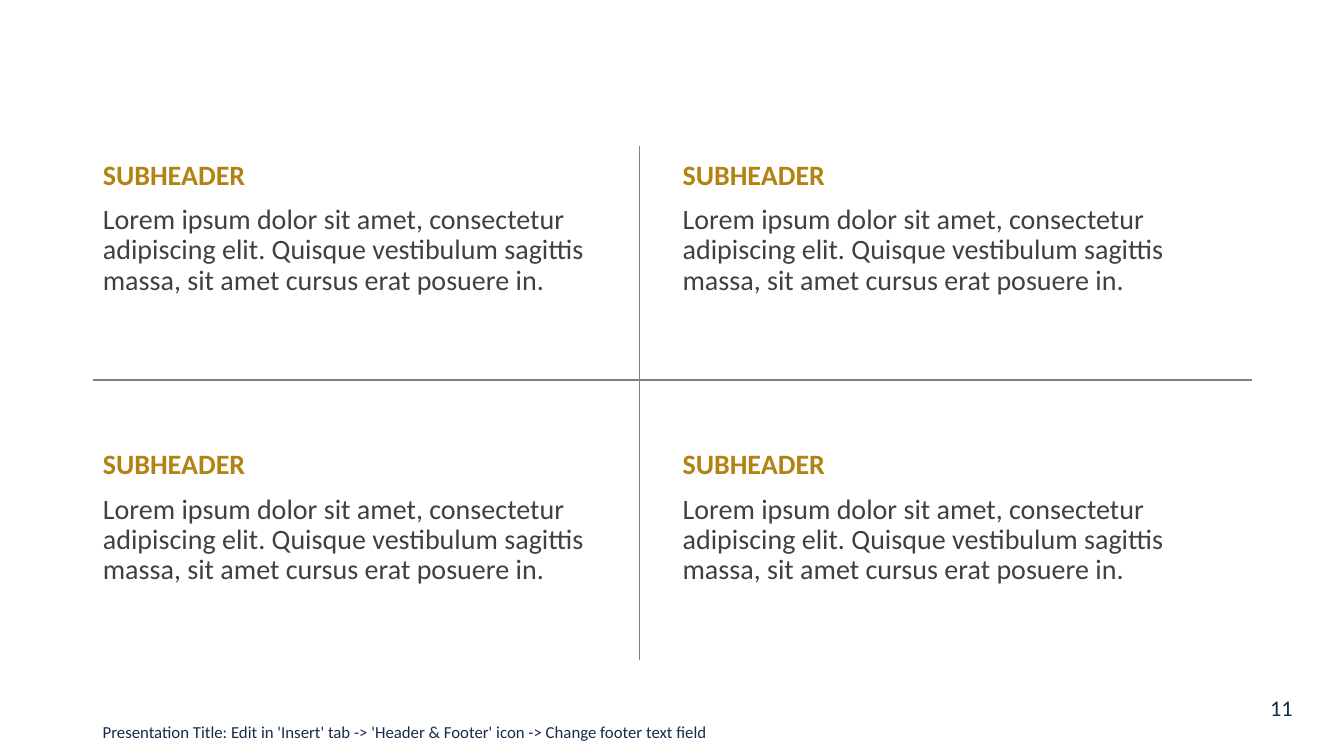
"""Build a four-quadrant text slide divided by a thin grey cross."""
import pptx
import pptx.dml.color
import pptx.enum.shapes
import pptx.enum.text
import pptx.oxml.ns
import pptx.util
from lxml import etree

COLOURS = {"gold": "B28312", "grey": "404040", "navy": "182B49", "rule": "808080"}
LOREM = (
    "Lorem ipsum dolor sit amet, consectetur adipiscing elit. "
    "Quisque vestibulum sagittis massa, sit amet cursus erat posuere in."
)
FOOTER = (
    "Presentation Title: Edit in 'Insert' tab -> 'Header & Footer' icon "
    "-> Change footer text field"
)
LEFT, RIGHT = 92, 1242
COLUMNS = (LEFT, 667)
ROWS = (155, 442)
ALIGN = pptx.enum.text.PP_ALIGN
ANCHOR = pptx.enum.text.MSO_ANCHOR


class SlideBuilder:
    SCALE = 9144
    FONT = "Calibri"

    def __init__(self, slide):
        self.slide = slide

    def px(self, *lengths):
        return [pptx.util.Emu(length * self.SCALE) for length in lengths]

    def colour(self, name):
        return pptx.dml.color.RGBColor.from_string(COLOURS[name])

    def run(self, paragraph, text, size, colour, bold=False):
        run = paragraph.add_run()
        run.text = text
        run.font.name = self.FONT
        run.font.size = pptx.util.Pt(size)
        run.font.bold = bold
        run.font.color.rgb = self.colour(colour)

    def quadrant(self, body, left, top):
        body.left, body.top, body.width, body.height = self.px(left, top, 542, 155)
        frame = body.text_frame
        frame.auto_size = pptx.enum.text.MSO_AUTO_SIZE.NONE
        frame.vertical_anchor = ANCHOR.TOP
        subheader, description = frame.paragraphs[0], frame.add_paragraph()
        for paragraph, before in ((subheader, 0), (description, 10)):
            properties = paragraph._p.get_or_add_pPr()
            properties.set("marL", "0")
            properties.set("indent", "0")
            etree.SubElement(properties, pptx.oxml.ns.qn("a:buNone"))
            paragraph.line_spacing = 0.9
            paragraph.space_before = pptx.util.Pt(before)
        self.run(subheader, "SUBHEADER", 20, "gold", True)
        self.run(description, LOREM, 20, "grey")

    def label(self, text, left, top, width, size, align):
        box = self.slide.shapes.add_textbox(*self.px(left, top, width, 40))
        frame = box.text_frame
        frame.word_wrap = True
        frame.vertical_anchor = ANCHOR.MIDDLE
        frame.paragraphs[0].alignment = align
        self.run(frame.paragraphs[0], text, size, "navy")

    def rule(self, x1, y1, x2, y2):
        line = self.slide.shapes.add_connector(
            pptx.enum.shapes.MSO_CONNECTOR.STRAIGHT, *self.px(x1, y1, x2, y2)
        )
        line.line.color.rgb = self.colour("rule")
        line.line.width = pptx.util.Pt(1)
        etree.SubElement(line._element.spPr, pptx.oxml.ns.qn("a:effectLst"))


def main():
    deck = pptx.Presentation()
    deck.slide_width = pptx.util.Inches(13.33)
    deck.slide_height = pptx.util.Inches(7.5)
    comparison = deck.slide_layouts.get_by_name("Comparison")
    slide = deck.slides.add_slide(comparison)
    builder = SlideBuilder(slide)

    title = slide.shapes.title._element
    title.getparent().remove(title)
    corners = [(left, top) for top in ROWS for left in COLUMNS]
    for body, (left, top) in zip(slide.placeholders, corners):
        builder.quadrant(body, left, top)

    builder.rule(634, 145, 634, 655)
    builder.rule(LEFT, 377, RIGHT, 377)
    builder.label(FOOTER, LEFT, 706, 800, 12, ALIGN.LEFT)
    builder.label("11", 942, 682, 350, 16, ALIGN.RIGHT)
    deck.save("out.pptx")


if __name__ == "__main__":
    main()
